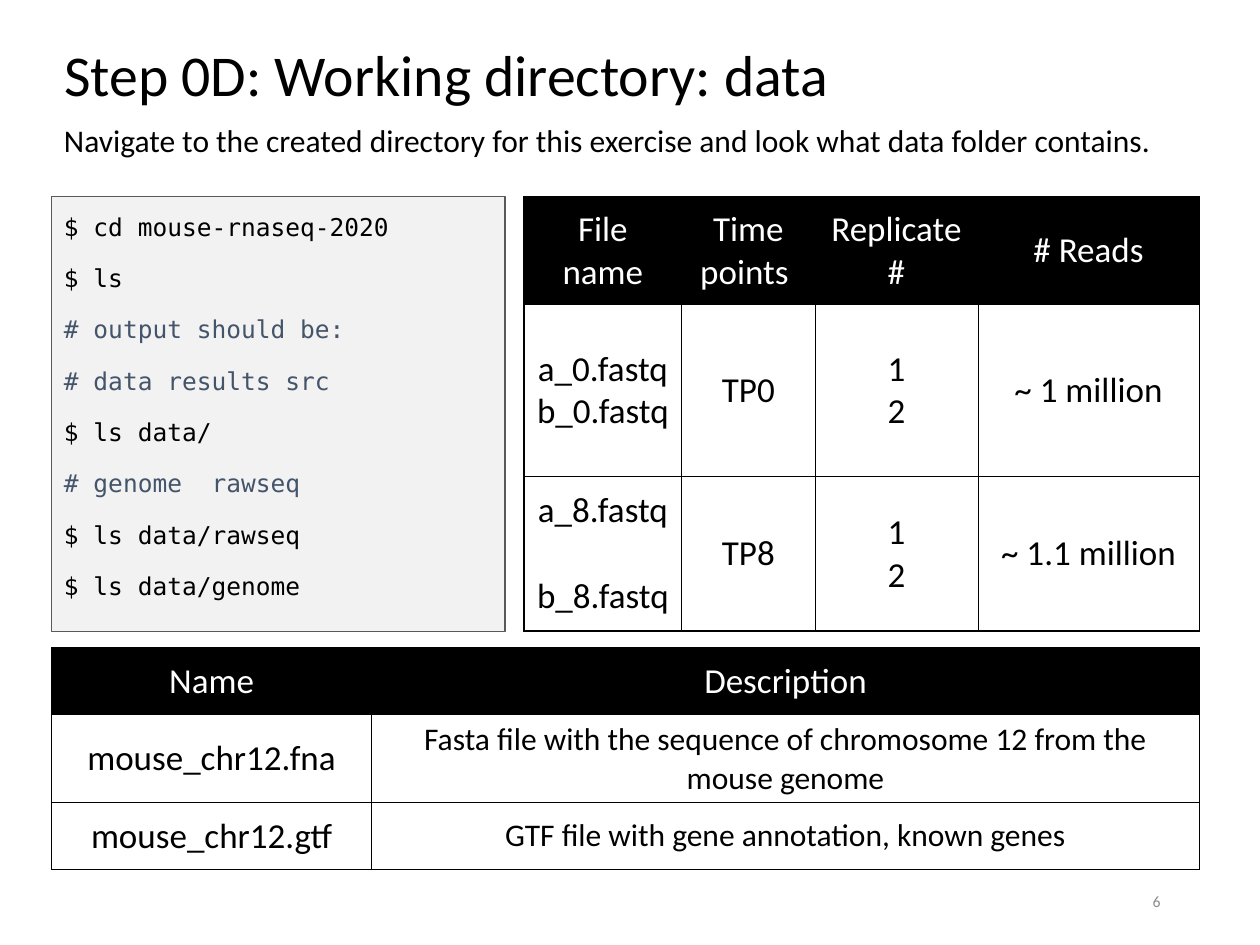
import pptx
import pptx.dml.color
import pptx.enum.shapes
import pptx.enum.text
import pptx.oxml.ns
import pptx.util
from lxml import etree

Inches = pptx.util.Inches
Pt = pptx.util.Pt
ALIGN = pptx.enum.text.PP_ALIGN
ANCHOR = pptx.enum.text.MSO_ANCHOR

COLORS = {
    "ink": "000000",
    "paper": "FFFFFF",
    "code_fill": "F2F2F2",
    "code_line": "595959",
    "comment": "44546A",
    "number": "8C8C8C",
}
BODY_FONT = "Calibri"
CODE_FONT = "DejaVu Sans Mono"
LEFT = 0.41

COMMANDS = [
    "$ cd mouse-rnaseq-2020",
    "$ ls",
    "# output should be:",
    "# data results src",
    "$ ls data/",
    "# genome  rawseq",
    "$ ls data/rawseq",
    "$ ls data/genome",
]
# Each cell is a list of paragraphs
READS = [
    [["File name"], ["Time points "], ["Replicate #"], ["# Reads"]],
    [["a_0.fastq", "b_0.fastq"], ["TP0"], ["1", "2"], ["~ 1 million"]],
    [["a_8.fastq", " b_8.fastq"], ["TP8"], ["1", "2"], ["~ 1.1 million"]],
]
GENOME = [
    [["Name"], ["Description"]],
    [["mouse_chr12.fna"],
     ["Fasta file with the sequence of chromosome 12 from the mouse genome"]],
    [["mouse_chr12.gtf"], ["GTF file with gene annotation, known genes"]],
]


def rgb(name):
    return pptx.dml.color.RGBColor.from_string(COLORS[name])


def write_lines(frame, lines, size, color="ink", font=BODY_FONT, align=ALIGN.LEFT):
    """Write one run per paragraph and return the paragraphs."""
    for index, line in enumerate(lines):
        paragraph = frame.paragraphs[0] if index == 0 else frame.add_paragraph()
        paragraph.alignment = align
        run = paragraph.add_run()
        run.text = line
        run.font.name = font
        run.font.size = Pt(size)
        run.font.color.rgb = rgb(color)
    return frame.paragraphs


def add_title(slide, text):
    title = slide.shapes.title
    title.left, title.top = Inches(LEFT), Inches(-0.11)
    title.width, title.height = Inches(8.62), Inches(1.45)
    title.text_frame.vertical_anchor = ANCHOR.MIDDLE
    write_lines(title.text_frame, [text], 33)[0].line_spacing = 0.9


def add_text(slide, box, text, size, color="ink", align=ALIGN.LEFT, anchor=ANCHOR.TOP):
    frame = slide.shapes.add_textbox(*map(Inches, box)).text_frame
    frame.word_wrap = True
    frame.vertical_anchor = anchor
    write_lines(frame, [text], size, color, align=align)


def add_code_box(slide, box, commands):
    code = slide.shapes.add_shape(
        pptx.enum.shapes.MSO_SHAPE.RECTANGLE, *map(Inches, box))
    code.shadow.inherit = False
    code.fill.solid()
    code.fill.fore_color.rgb = rgb("code_fill")
    code.line.color.rgb = rgb("code_line")
    code.line.width = Pt(0.75)
    frame = code.text_frame
    frame.word_wrap = True
    frame.vertical_anchor = ANCHOR.TOP
    for paragraph in write_lines(frame, commands, 14, font=CODE_FONT):
        paragraph.line_spacing = 1.3
        paragraph.space_before = Pt(7.5)
        run = paragraph.runs[0]
        if run.text.startswith("#"):
            run.font.color.rgb = rgb("comment")


def set_borders(cell, widths):
    """Draw the cell's borders; widths maps L, R, T, B to points."""
    properties = cell._tc.get_or_add_tcPr()
    qn = pptx.oxml.ns.qn
    for side, width in widths.items():
        line = etree.SubElement(properties, qn(f"a:ln{side}"), w=str(int(Pt(width))))
        fill = etree.SubElement(line, qn("a:solidFill"))
        etree.SubElement(fill, qn("a:srgbClr"), val=COLORS["ink"])


def add_grid(slide, left, top, columns, rows, content, outer, text_sizes):
    """Add a table with a black header, thin inner and stronger outer lines."""
    table = slide.shapes.add_table(
        len(rows), len(columns), Inches(left), Inches(top),
        Inches(sum(columns)), Inches(sum(rows))).table
    for column, width in zip(table.columns, columns):
        column.width = Inches(width)
    for row, height in zip(table.rows, rows):
        row.height = Inches(height)

    last_row, last_column = len(rows) - 1, len(columns) - 1
    for r, line in enumerate(content):
        for c, paragraphs in enumerate(line):
            cell = table.cell(r, c)
            header = r == 0
            set_borders(cell, {
                "L": outer if c == 0 else 0.25,
                "R": outer if c == last_column else 0.25,
                "T": outer if header else 0.5,
                "B": outer if r == last_row else 0.5,
            })
            cell.fill.solid()
            cell.fill.fore_color.rgb = rgb("ink" if header else "paper")
            cell.vertical_anchor = ANCHOR.MIDDLE
            write_lines(cell.text_frame, paragraphs,
                        20 if header else text_sizes[c],
                        "paper" if header else "ink", align=ALIGN.CENTER)


def main():
    deck = pptx.Presentation()
    deck.slide_width, deck.slide_height = Inches(10), Inches(7.5)
    slide = deck.slides.add_slide(deck.slide_layouts[5])

    # Heading and instruction
    add_title(slide, "Step 0D: Working directory: data")
    add_text(slide, (LEFT, 0.91, 9.17, 0.4),
             "Navigate to the created directory for this exercise "
             "and look what data folder contains.", 18)

    # Terminal commands beside the sequencing files
    add_code_box(slide, (LEFT, 1.56, 3.6, 3.45), COMMANDS)
    add_grid(slide, 4.16, 1.56, [1.25, 1.06, 1.29, 1.76], [0.86, 1.36, 1.23],
             READS, 1, [20] * 4)

    # Genome files
    add_grid(slide, LEFT, 5.14, [2.54, 6.57], [0.53, 0.7, 0.53],
             GENOME, 0.75, [20, 18])

    # Page number
    add_text(slide, (7.06, 6.95, 2.25, 0.4), "6", 9, "number",
             ALIGN.RIGHT, ANCHOR.MIDDLE)

    deck.save("out.pptx")


if __name__ == "__main__":
    main()
